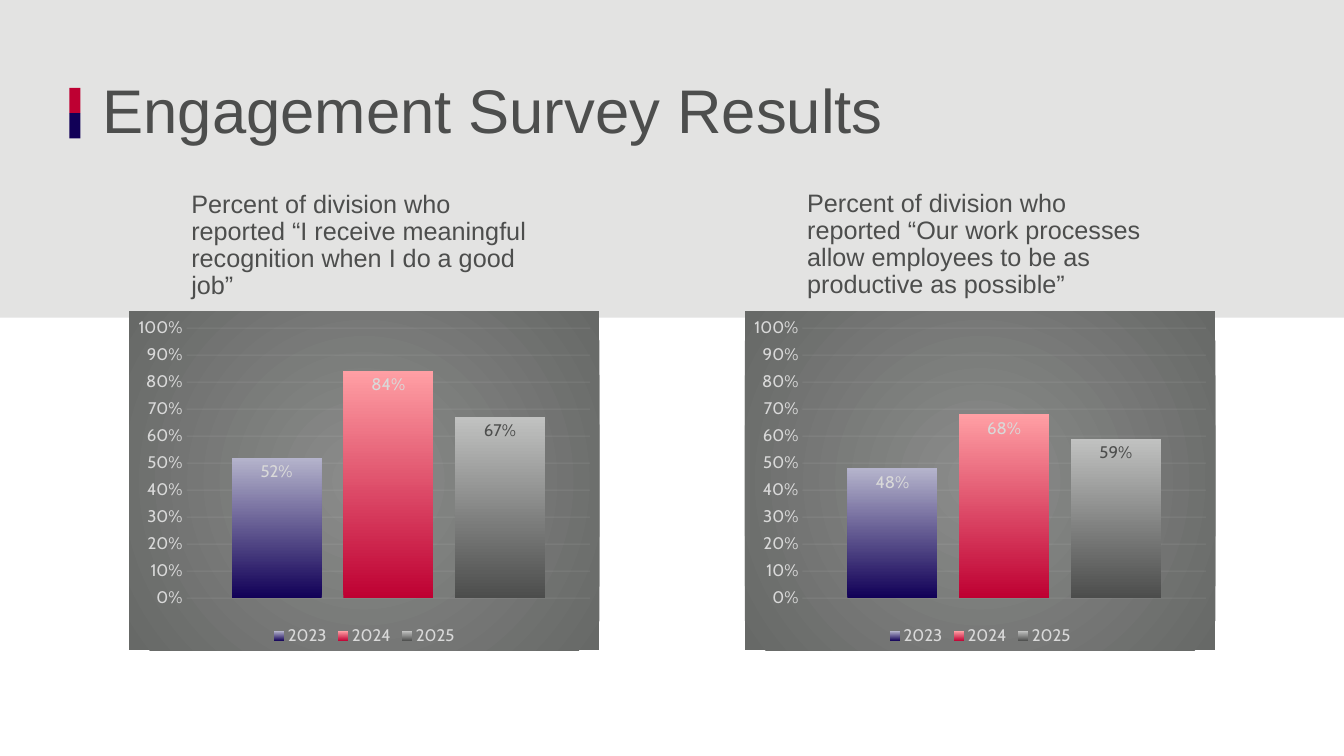
import pptx
import pptx.chart.data
import pptx.dml.color
import pptx.enum.chart
import pptx.enum.shapes
import pptx.enum.text
import pptx.oxml
import pptx.oxml.ns
import pptx.util
from lxml import etree

Pt = pptx.util.Pt

COLORS = {
    "band": "E3E3E2",
    "red": "BE0032",
    "navy": "110057",
    "text": "4D4E4D",
    "pale": "D9D9D9",
    "grid": "F2F2F2",
    "panel_center": "8B8C8B",
    "panel_edge": "676967",
    "navy_light": "B5B4CC",
    "red_light": "FF9FA4",
    "gray": "4C4D4C",
    "gray_light": "C1C2C1",
}

# Year, bar colour at the bottom, bar colour at the top, label colour
YEARS = [
    ("2023", "navy", "navy_light", "pale"),
    ("2024", "red", "red_light", "pale"),
    ("2025", "gray", "gray_light", "text"),
]

# Chart left, caption top, question, share per year
SURVEYS = [
    (92.2, 133.2,
     "Percent of division who reported “I receive meaningful recognition "
     "when I do a good job”",
     (0.52, 0.84, 0.67)),
    (532.1, 132.5,
     "Percent of division who reported “Our work processes allow employees "
     "to be as productive as possible”",
     (0.48, 0.68, 0.59)),
]


def rgb(name):
    return pptx.dml.color.RGBColor.from_string(COLORS[name])


def set_font(font, face, size, color):
    font.name = face
    font.size = Pt(size)
    font.color.rgb = rgb(color)


def add_block(slide, left, top, width, height, color):
    block = slide.shapes.add_shape(
        pptx.enum.shapes.MSO_SHAPE.RECTANGLE,
        Pt(left), Pt(top), Pt(width), Pt(height))
    block.shadow.inherit = False
    block.fill.solid()
    block.fill.fore_color.rgb = rgb(color)
    block.line.fill.background()


def add_text(slide, left, top, width, height, text, size, anchor):
    frame = slide.shapes.add_textbox(
        Pt(left), Pt(top), Pt(width), Pt(height)).text_frame
    frame.word_wrap = True
    frame.vertical_anchor = anchor
    paragraph = frame.paragraphs[0]
    paragraph.text = text
    paragraph.line_spacing = 0.9
    set_font(paragraph.font, "Arial", size, "text")


def fill_panel(chart):
    """Give the chart area a radial gradient and no outline."""
    panel = pptx.oxml.parse_xml(
        f'<c:spPr {pptx.oxml.ns.nsdecls("c", "a")}>'
        '<a:gradFill><a:gsLst>'
        f'<a:gs pos="0"><a:srgbClr val="{COLORS["panel_center"]}"/></a:gs>'
        f'<a:gs pos="100000"><a:srgbClr val="{COLORS["panel_edge"]}"/></a:gs>'
        '</a:gsLst><a:path path="circle">'
        '<a:fillToRect l="50000" t="50000" r="50000" b="50000"/>'
        '</a:path></a:gradFill><a:ln><a:noFill/></a:ln></c:spPr>')
    chart.element.find(pptx.oxml.ns.qn("c:chart")).addnext(panel)


def style_axes(chart):
    chart.category_axis.visible = False
    percent = chart.value_axis
    percent.minimum_scale, percent.maximum_scale = 0, 1
    percent.major_unit = 0.1
    percent.major_tick_mark = pptx.enum.chart.XL_TICK_MARK.NONE
    percent.format.line.fill.background()
    percent.tick_labels.number_format = "0%"
    percent.tick_labels.number_format_is_linked = False
    set_font(percent.tick_labels.font, "Cabin", 12, "pale")
    # Gridlines at 10 % opacity
    grid = percent.major_gridlines.format.line
    grid.width = Pt(0.75)
    grid.color.rgb = rgb("grid")
    grid_color = percent.major_gridlines._xAx.find(
        ".//" + pptx.oxml.ns.qn("c:majorGridlines")).find(
        ".//" + pptx.oxml.ns.qn("a:srgbClr"))
    etree.SubElement(grid_color, pptx.oxml.ns.qn("a:alpha"), val="10000")


def style_bars(series, bottom, top, label_color):
    fill = series.format.fill
    fill.gradient()
    fill.gradient_angle = 90
    for stop, color in zip(fill.gradient_stops, (bottom, top)):
        stop.color.rgb = rgb(color)
    series.invert_if_negative = False
    labels = series.data_labels
    labels.show_value = True
    labels.position = pptx.enum.chart.XL_LABEL_POSITION.INSIDE_END
    labels.number_format = "0%"
    labels.number_format_is_linked = False
    set_font(labels.font, "Cabin", 12, label_color)


def add_survey_chart(slide, left, top, width, height, shares):
    data = pptx.chart.data.CategoryChartData(number_format="0%")
    data.categories = ["1"]
    for (year, *_), share in zip(YEARS, shares):
        data.add_series(year, [share])
    chart = slide.shapes.add_chart(
        pptx.enum.chart.XL_CHART_TYPE.COLUMN_CLUSTERED,
        Pt(left), Pt(top), Pt(width), Pt(height), data).chart
    chart.has_title = False
    set_font(chart.font, "Cabin", 10, "text")
    fill_panel(chart)
    style_axes(chart)
    # Bars
    bars = chart.plots[0]
    bars.gap_width = 100
    bars.overlap = -24
    bars.vary_by_categories = False
    for series, (_, *colors) in zip(bars.series, YEARS):
        style_bars(series, *colors)
    # Legend
    chart.has_legend = True
    chart.legend.position = pptx.enum.chart.XL_LEGEND_POSITION.BOTTOM
    chart.legend.include_in_layout = False
    set_font(chart.legend.font, "Cabin", 12, "pale")


def main():
    deck = pptx.Presentation()
    deck.slide_width, deck.slide_height = Pt(960), Pt(540)
    slide = deck.slides.add_slide(deck.slide_layouts[6])
    anchors = pptx.enum.text.MSO_ANCHOR

    # Header band, two-colour marker and title
    add_block(slide, 0, 0, 960, 227, "band")
    for row, color in enumerate(("red", "navy")):
        add_block(slide, 49.5, 62.8 + 18 * row, 8, 18, color)
    add_text(slide, 66.2, 28.8, 828, 104.4, "Engagement Survey Results",
             44, anchors.MIDDLE)

    # Caption and chart for each question
    for left, caption_top, question, shares in SURVEYS:
        add_text(slide, left + 37.4, caption_top, 261.4, 137.5, question,
                 18, anchors.TOP)
        add_survey_chart(slide, left, 222.4, 336, 242, shares)

    deck.save("out.pptx")


if __name__ == "__main__":
    main()
